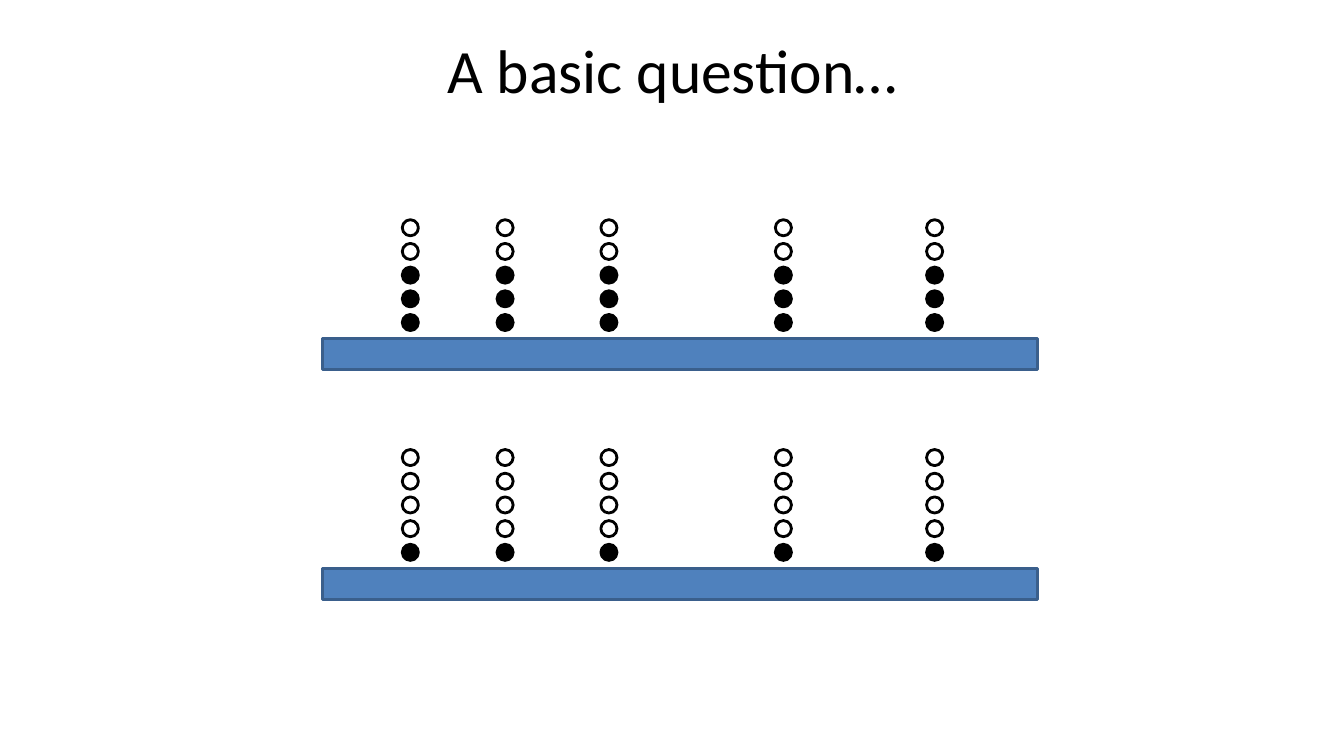
"""Build a slide comparing two bars that carry columns of filled and open circles."""
from dataclasses import dataclass

from pptx import Presentation
from pptx.dml.color import RGBColor
from pptx.enum.shapes import MSO_SHAPE
from pptx.enum.text import MSO_ANCHOR, PP_ALIGN
from pptx.shapes.group import GroupShape
from pptx.slide import Slide
from pptx.util import Inches, Pt

COLORS = {"black": "000000", "white": "FFFFFF", "bar": "4F81BD", "bar_line": "3A5F8C"}
COLUMN_LEFTS = (3.99, 4.93, 5.96, 7.69, 9.19)
CIRCLES_PER_COLUMN = 5
CIRCLE_SIZE = 0.16
CIRCLE_PITCH = 0.94 / (CIRCLES_PER_COLUMN - 1)
CIRCLE_RISE = 0.24
BAR_LEFT, BAR_WIDTH, BAR_HEIGHT = 3.2, 7.09, 0.31


@dataclass(frozen=True)
class Strand:
    bar_top: float
    filled_count: int


STRANDS = (Strand(bar_top=3.36, filled_count=3), Strand(bar_top=5.64, filled_count=1))


def color(name: str) -> RGBColor:
    return RGBColor.from_string(COLORS[name])


def add_text(slide: Slide, text: str, *, left: float, top: float, width: float,
             height: float, size: float, font: str, fill: str) -> None:
    box = slide.shapes.add_textbox(Inches(left), Inches(top), Inches(width), Inches(height))
    frame = box.text_frame
    frame.word_wrap = True
    frame.vertical_anchor = MSO_ANCHOR.MIDDLE
    paragraph = frame.paragraphs[0]
    paragraph.text = text
    paragraph.alignment = PP_ALIGN.CENTER
    paragraph.font.size = Pt(size)
    paragraph.font.name = font
    paragraph.font.color.rgb = color(fill)


def add_outlined(group: GroupShape, kind: MSO_SHAPE, left: float, top: float,
                 width: float, height: float, fill: str, line: str) -> None:
    shape = group.shapes.add_shape(kind, Inches(left), Inches(top), Inches(width), Inches(height))
    shape.shadow.inherit = False
    shape.fill.solid()
    shape.fill.fore_color.rgb = color(fill)
    shape.line.color.rgb = color(line)
    shape.line.width = Pt(2)


def add_strand(slide: Slide, strand: Strand) -> None:
    group = slide.shapes.add_group_shape()
    add_outlined(group, MSO_SHAPE.RECTANGLE, BAR_LEFT, strand.bar_top,
                 BAR_WIDTH, BAR_HEIGHT, "bar", "bar_line")
    for left in COLUMN_LEFTS:
        for level in range(CIRCLES_PER_COLUMN):
            top = strand.bar_top - CIRCLE_RISE - level * CIRCLE_PITCH
            fill = "black" if level < strand.filled_count else "white"
            add_outlined(group, MSO_SHAPE.OVAL, left, top, CIRCLE_SIZE, CIRCLE_SIZE, fill, "black")


def main() -> None:
    presentation = Presentation()
    presentation.slide_width = Inches(13.33)
    presentation.slide_height = Inches(7.5)
    slide = presentation.slides.add_slide(presentation.slide_layouts[6])
    add_text(slide, "A basic question…", left=2.17, top=0.06, width=9, height=1.25,
             size=44, font="Calibri", fill="black")
    for strand in STRANDS:
        add_strand(slide, strand)
    presentation.save("out.pptx")


if __name__ == "__main__":
    main()
